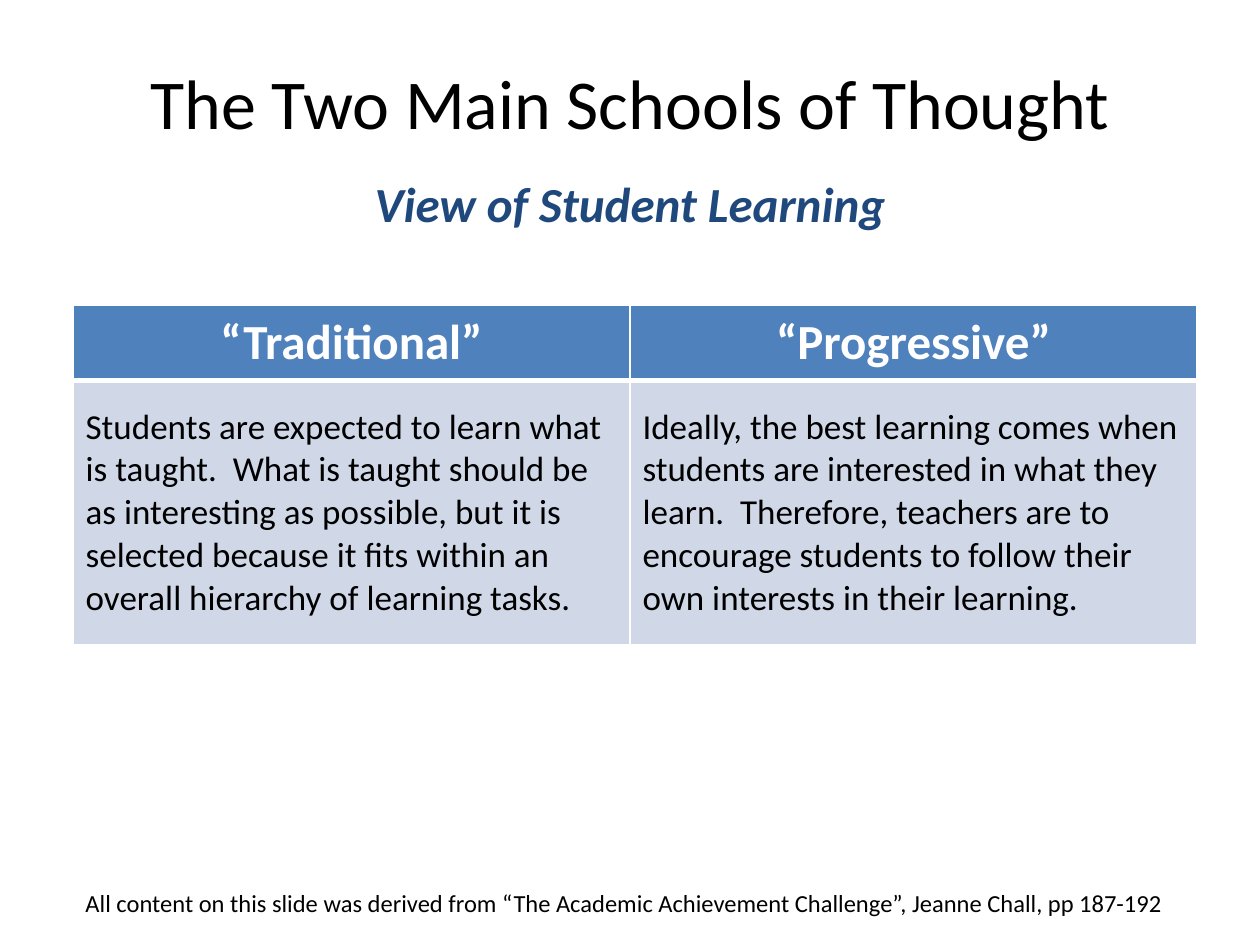
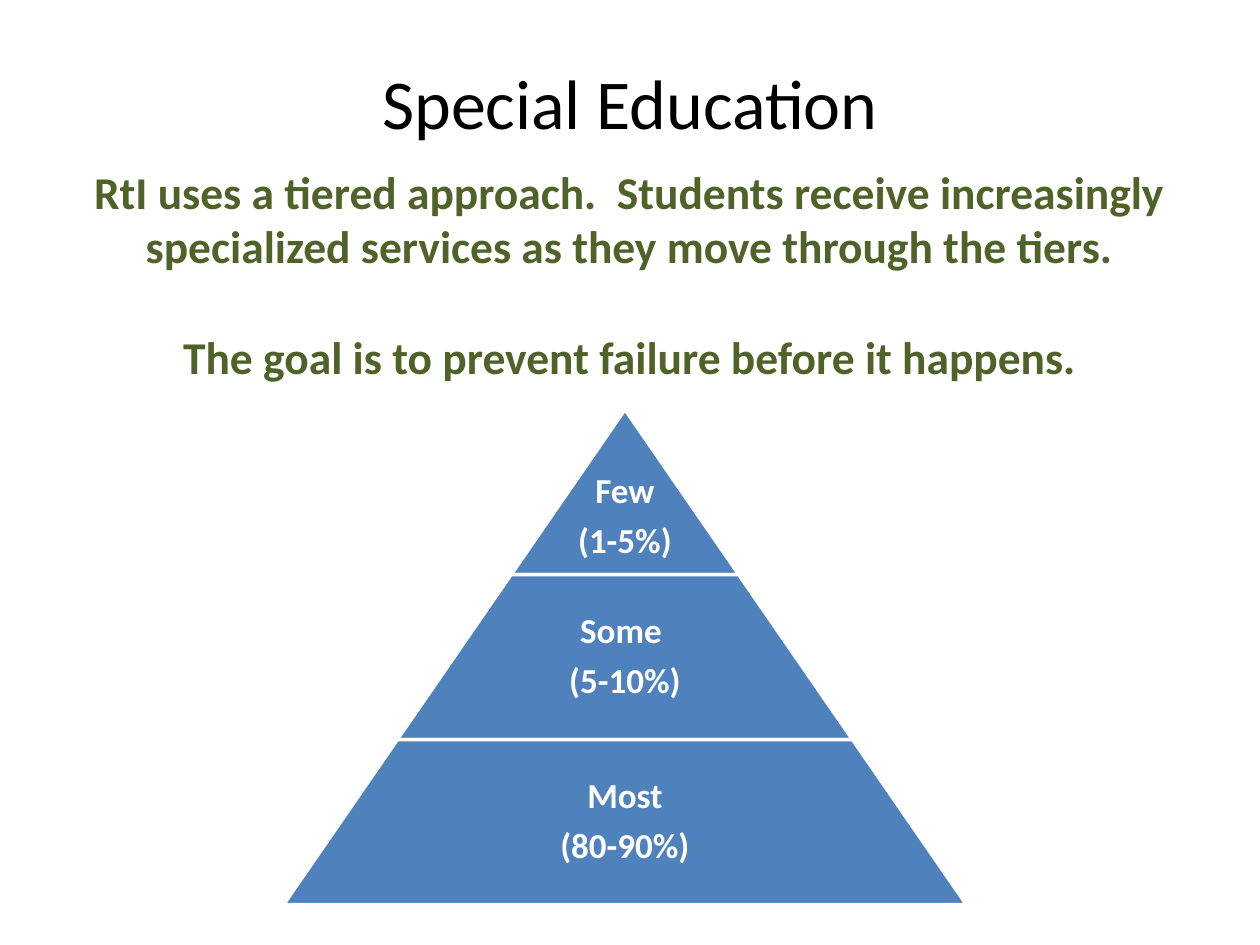
import pptx
import pptx.dml.color
import pptx.enum.shapes
import pptx.enum.text
import pptx.oxml
import pptx.oxml.ns
import pptx.util

Inches = pptx.util.Inches
Pt = pptx.util.Pt
RGBColor = pptx.dml.color.RGBColor
CENTER = pptx.enum.text.PP_ALIGN.CENTER
LEFT = pptx.enum.text.PP_ALIGN.LEFT
MIDDLE = pptx.enum.text.MSO_ANCHOR.MIDDLE

FONT = "Calibri"
COLORS = {
    "black": "000000",
    "white": "FFFFFF",
    "navy": "1F497D",
    "green": "4F6228",
    "blue": "4F81BD",
    "pale blue": "D0D8E8",
}


def write_text(frame, *lines, size, color="black", bold=False, italic=False,
               align=CENTER, line_spacing=None, gap=0):
    """Write one paragraph per line, with gap points after each but the last."""
    frame.word_wrap = True
    for number, line in enumerate(lines):
        paragraph = frame.add_paragraph() if number else frame.paragraphs[0]
        paragraph.alignment = align
        paragraph.line_spacing = line_spacing
        if number < len(lines) - 1:
            paragraph.space_after = Pt(gap)
        run = paragraph.add_run()
        run.text = line
        run.font.name = FONT
        run.font.size = Pt(size)
        run.font.bold = bold
        run.font.italic = italic
        run.font.color.rgb = RGBColor.from_string(COLORS[color])


def set_borders(cell, **widths):
    """Draw white cell borders; widths maps lnL, lnR, lnT and lnB to points."""
    properties = cell._tc.get_or_add_tcPr()
    for position, (side, width) in enumerate(widths.items()):
        border = pptx.oxml.parse_xml(
            f'<a:{side} {pptx.oxml.ns.nsdecls("a")} w="{Pt(width)}"><a:solidFill>'
            f'<a:srgbClr val="{COLORS["white"]}"/></a:solidFill></a:{side}>')
        properties.insert(position, border)


presentation = pptx.Presentation()
presentation.slide_width = Inches(10)
presentation.slide_height = Inches(7.5)

# Slides and their shared title style
slides = []
for title_text in ("The Two Main Schools of Thought", "Special Education"):
    slide = presentation.slides.add_slide(presentation.slide_layouts[5])
    title = slide.shapes.title
    title.left, title.top = Inches(0), Inches(0)
    title.width, title.height = Inches(10), Inches(1.61)
    title.text_frame.auto_size = pptx.enum.text.MSO_AUTO_SIZE.NONE
    title.text_frame.vertical_anchor = MIDDLE
    write_text(title.text_frame, title_text, size=40)
    slides.append(slide)
schools_slide, education_slide = slides

# Slide 1: the two schools compared
subtitle = schools_slide.shapes.add_textbox(
    Inches(0.25), Inches(1.33), Inches(9.5), Inches(0.57))
write_text(subtitle.text_frame, "View of Student Learning",
           size=28, color="navy", bold=True, italic=True)

schools = [
    ("“Traditional”", 4.42,
     "Students are expected to learn what is taught.  What is taught should be "
     "as interesting as possible, but it is selected because it fits within an "
     "overall hierarchy of learning tasks."),
    ("“Progressive”", 4.5,
     "Ideally, the best learning comes when students are interested in what they "
     "learn.  Therefore, teachers are to encourage students to follow their own "
     "interests in their learning."),
]
table = schools_slide.shapes.add_table(
    2, len(schools), Inches(0.58), Inches(2.42), Inches(8.92), Inches(2.7)).table
table.rows[0].height = Inches(0.6)
table.rows[1].height = Inches(2.1)
for column, (school, width, view) in enumerate(schools):
    table.columns[column].width = Inches(width)
    header, body = table.cell(0, column), table.cell(1, column)
    write_text(header.text_frame, school, size=28, color="white", bold=True)
    write_text(body.text_frame, view, size=20, align=LEFT)
    for cell, fill in ((header, "blue"), (body, "pale blue")):
        cell.vertical_anchor = MIDDLE
        cell.fill.solid()
        cell.fill.fore_color.rgb = RGBColor.from_string(COLORS[fill])
    set_borders(header, lnL=1, lnR=1, lnT=1, lnB=3)
    set_borders(body, lnL=1, lnR=1, lnT=3, lnB=1)

citation = schools_slide.shapes.add_textbox(
    Inches(0.58), Inches(7), Inches(8.92), Inches(0.34))
write_text(citation.text_frame,
           "All content on this slide was derived from “The Academic Achievement "
           "Challenge”, Jeanne Chall, pp 187-192", size=14, align=LEFT)

# Slide 2: the pyramid of tiers
summary = education_slide.shapes.add_textbox(
    Inches(0.25), Inches(1.25), Inches(9.5), Inches(2.29))
write_text(summary.text_frame,
           "RtI uses a tiered approach.  Students receive increasingly specialized "
           "services as they move through the tiers.",
           "The goal is to prevent failure before it happens.",
           size=26, color="green", bold=True, gap=32)

tiers = [("Few", "(1-5%)"), ("Some ", "(5-10%)"), ("Most", "(80-90%)")]
pyramid_center, pyramid_top, pyramid_width = 4.96, 3.25, 5.42
tier_height = 1.31
tier_step = pyramid_width / len(tiers)
label_margin = 0.03
for number, lines in enumerate(tiers):
    width = tier_step * (number + 1)
    top = Inches(pyramid_top + number * tier_height)
    tier = education_slide.shapes.add_shape(
        pptx.enum.shapes.MSO_SHAPE.TRAPEZOID,
        Inches(pyramid_center - width / 2), top, Inches(width), Inches(tier_height))
    tier.adjustments[0] = tier_step / 2 / tier_height
    tier.shadow.inherit = False
    tier.fill.solid()
    tier.fill.fore_color.rgb = RGBColor.from_string(COLORS["blue"])
    tier.line.color.rgb = RGBColor.from_string(COLORS["white"])
    tier.line.width = Pt(2)

    label_width = max(tier_step, width * 0.65)
    label = education_slide.shapes.add_textbox(
        Inches(pyramid_center - label_width / 2), top,
        Inches(label_width), Inches(tier_height))
    frame = label.text_frame
    frame.vertical_anchor = MIDDLE
    frame.margin_left = frame.margin_right = Inches(label_margin)
    frame.margin_bottom = Inches(label_margin)
    # The label of the pointed tier sits lower, where the tier is wide enough
    frame.margin_top = Inches(label_margin if number else label_margin + 0.4)
    write_text(frame, *lines, size=20, color="white", bold=True,
               line_spacing=0.9, gap=7)
    frame.paragraphs[-1].space_after = Pt(7)

presentation.save("out.pptx")
